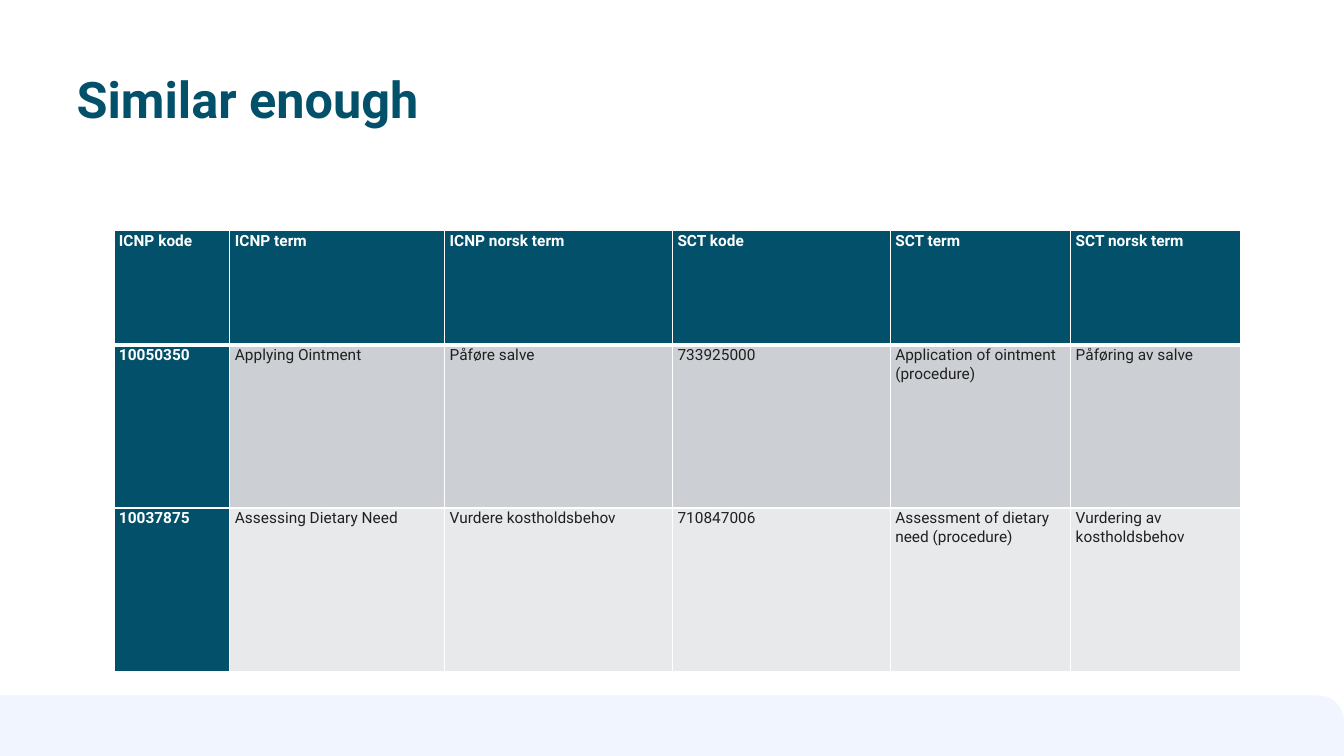
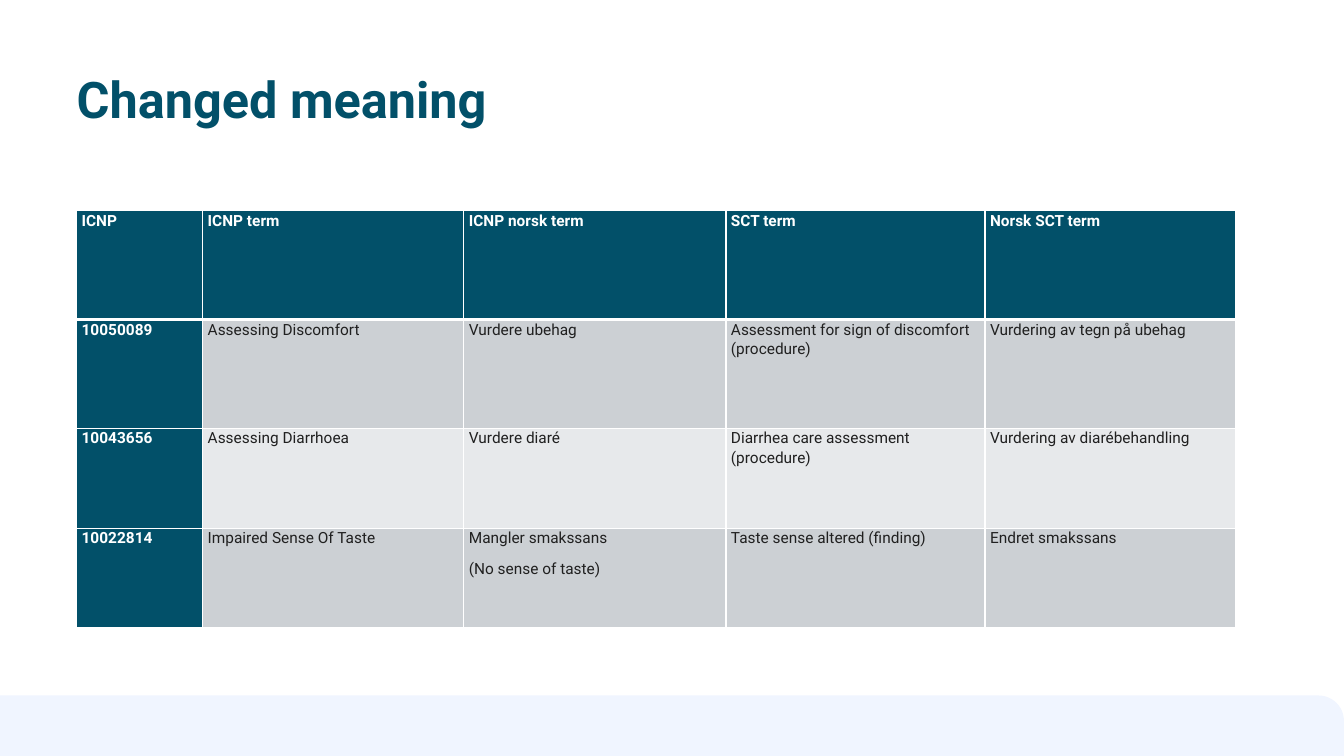
from dataclasses import dataclass

from lxml.etree import SubElement
from pptx import Presentation
from pptx.dml.color import RGBColor as Rgb
from pptx.enum.shapes import MSO_SHAPE as Kind
from pptx.enum.text import MSO_ANCHOR as Anchor, PP_ALIGN as Align
from pptx.oxml.ns import qn
from pptx.util import Pt

PX = 9144  # 100 px to the inch
WIDE, HIGH = 1333, 750


@dataclass(frozen=True)
class Theme:
    font: str = "Roboto"
    teal: str = "025069"
    ink: str = "202020"
    white: str = "FFFFFF"
    band: str = "F0F5FF"
    rows: tuple = ("CCD0D4", "E7E9EB")
    head: int = 36
    body: int = 11


theme = Theme()


def write(frame, text, size, color, bold=False, line=None, after=None):
    """Fill a frame, one paragraph for each line of the text."""
    frame.text = text
    frame.word_wrap = True
    for para in frame.paragraphs:
        para.alignment = Align.LEFT
        para.line_spacing = line
        para.space_after = after
        font = para.font
        font.name, font.size, font.bold = theme.font, Pt(size), bold
        font.color.rgb = Rgb.from_string(color)


def edge(cell, side, width):
    """Draw a white border on side L, R, T or B; call before the fill is set."""
    line = SubElement(cell._tc.get_or_add_tcPr(), qn(f"a:ln{side}"), w=str(Pt(width)))
    fill = SubElement(line, qn("a:solidFill"))
    SubElement(fill, qn("a:srgbClr"), val=theme.white)


pages = [
    {
        "title": "Similar enough",
        "at": (113, 229),
        "cols": [115, 213, 226, 216, 179, 169],
        "rows": [113, 162, 162],
        "cells": [
            ["ICNP kode", "ICNP term", "ICNP norsk term",
             "SCT kode", "SCT term", "SCT norsk term"],
            ["10050350", "Applying Ointment", "Påføre salve", "733925000",
             "Application of ointment (procedure)", "Påføring av salve"],
            ["10037875", "Assessing Dietary Need", "Vurdere kostholdsbehov", "710847006",
             "Assessment of dietary need (procedure)", "Vurdering av kostholdsbehov"],
        ],
    },
    {
        "title": "Changed meaning",
        "at": (76, 209),
        "cols": [125, 259, 260, 257, 249],
        "rows": [108, 108, 99, 99],
        "cells": [
            ["ICNP", "ICNP term", "ICNP norsk term", "SCT term", "Norsk SCT term"],
            ["10050089", "Assessing Discomfort", "Vurdere ubehag",
             "Assessment for sign of discomfort (procedure)", "Vurdering av tegn på ubehag"],
            ["10043656", "Assessing Diarrhoea", "Vurdere diaré",
             "Diarrhea care assessment (procedure)", "Vurdering av diarébehandling"],
            ["10022814", "Impaired Sense Of Taste", "Mangler smakssans\n(No sense of taste)",
             "Taste sense altered (finding)", "Endret smakssans"],
        ],
    },
]

deck = Presentation()
deck.slide_width, deck.slide_height = WIDE * PX, HIGH * PX

for page in pages:
    slide = deck.slides.add_slide(deck.slide_layouts[5])
    shapes = slide.shapes

    title = shapes.title
    title.left, title.top, title.width, title.height = (n * PX for n in (76, 68, 1063, 114))
    frame = title.text_frame
    frame.margin_left = frame.margin_top = frame.margin_right = frame.margin_bottom = 0
    frame.vertical_anchor = Anchor.TOP
    write(frame, page["title"], size=theme.head, color=theme.teal, bold=True)

    band = shapes.add_shape(Kind.ROUND_1_RECTANGLE, 0, 690 * PX, WIDE * PX, 60 * PX)
    band.adjustments[0] = 0.42
    band.shadow.inherit = False
    band.fill.solid()
    band.fill.fore_color.rgb = Rgb.from_string(theme.band)
    band.line.fill.background()

    cols, rows = page["cols"], page["rows"]
    left, top = page["at"]
    table = shapes.add_table(len(rows), len(cols), left * PX, top * PX,
                             sum(cols) * PX, sum(rows) * PX).table
    table.first_col = True
    for col, width in zip(table.columns, cols):
        col.width = width * PX
    for row, height in zip(table.rows, rows):
        row.height = height * PX

    for r, texts in enumerate(page["cells"]):
        for c, text in enumerate(texts):
            cell = table.cell(r, c)
            head = r == 0 or c == 0
            cell.margin_left = cell.margin_right = 5 * PX
            cell.margin_top = cell.margin_bottom = 0
            for side in "LRTB":
                edge(cell, side, 3 if (r, side) in ((0, "B"), (1, "T")) else 1)
            cell.fill.solid()
            tint = theme.teal if head else theme.rows[(r - 1) % 2]
            cell.fill.fore_color.rgb = Rgb.from_string(tint)
            write(cell.text_frame, text, size=theme.body, bold=head,
                  color=theme.white if head else theme.ink, line=1.07, after=Pt(8))

deck.save("out.pptx")
